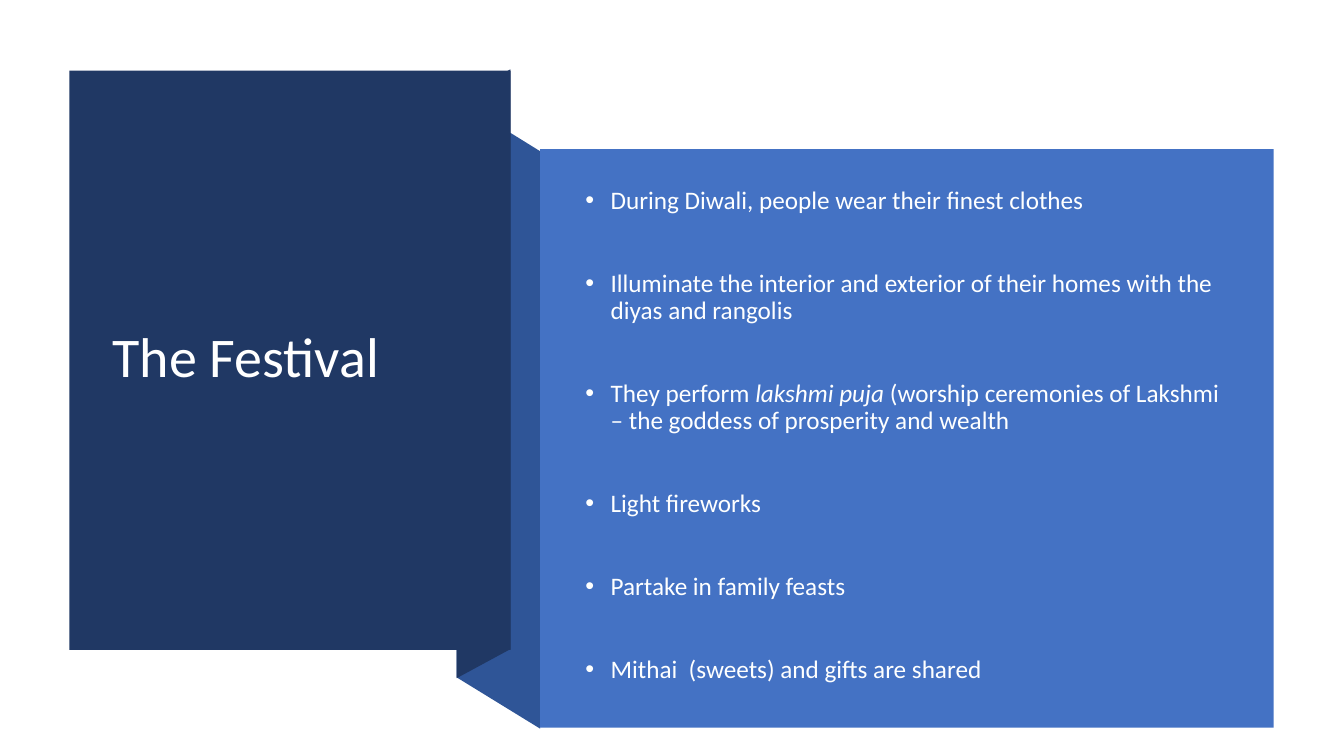
from pptx import Presentation
from pptx.util import Cm, Pt
from pptx.dml.color import RGBColor
from pptx.enum.shapes import MSO_SHAPE
from pptx.enum.text import MSO_ANCHOR
from lxml.etree import SubElement
from pptx.oxml.ns import qn


def paint(shape, color):
    shape.shadow.inherit = False
    shape.fill.solid()
    shape.fill.fore_color.rgb = RGBColor.from_string(color)
    shape.line.fill.background()


def add_text(slide, place, lines, size, color):
    box = slide.shapes.add_textbox(*[Cm(length) for length in place])
    frame = box.text_frame
    frame.word_wrap = True
    frame.vertical_anchor = MSO_ANCHOR.MIDDLE
    frame.text = "\n".join(lines)
    for para in frame.paragraphs:
        para.line_spacing = 0.9
        para.font.size = Pt(size)
        para.font.name = "Calibri"
        para.font.color.rgb = RGBColor.from_string(color)
    return frame.paragraphs


deck = Presentation()
deck.slide_width, deck.slide_height = Cm(33.87), Cm(19.05)
page = deck.slides.add_slide(deck.slide_layouts[6])

# Folded ribbon behind the panels
folds = [
    ("2F5597", [(13.61, 18.36), (11.51, 17.07), (11.51, 2.51), (13.61, 3.81)]),
    ("203864", [(12.86, 16.36), (11.51, 17.09), (11.51, 2.49), (12.86, 1.75)]),
]
for color, corners in folds:
    points = [(Cm(x), Cm(y)) for x, y in corners]
    outline = page.shapes.build_freeform(*points[0])
    outline.add_line_segments(points[1:], close=True)
    paint(outline.convert_to_shape(), color)

# Title panel and content panel
panels = [
    ("203864", (1.75, 1.78, 11.12, 14.6)),
    ("4472C4", (13.61, 3.76, 18.49, 14.58)),
]
for color, place in panels:
    panel = page.shapes.add_shape(MSO_SHAPE.RECTANGLE, *[Cm(length) for length in place])
    paint(panel, color)

# Title
add_text(page, (2.59, 2.72, 9.42, 12.67), ["The Festival"], 40, "FFFFFF")

# Bulleted customs
customs = [
    "During Diwali, people wear their finest clothes",
    "Illuminate the interior and exterior of their homes with the diyas and rangolis",
    "They perform lakshmi puja (worship ceremonies of Lakshmi – the goddess of prosperity and wealth",
    "Light fireworks",
    "Partake in family feasts",
    "Mithai  (sweets) and gifts are shared",
]
paras = add_text(page, (14.5, 4.27, 16.54, 13.41), customs, 18, "FEFFFF")
for number, para in enumerate(paras):
    para.space_before = Pt(39.8 if number else 10)
    properties = para._p.get_or_add_pPr()
    properties.set("marL", str(Cm(0.64)))
    properties.set("indent", str(-Cm(0.64)))
    bullet_font = SubElement(properties, qn("a:buFont"))
    bullet_font.set("typeface", "Arial")
    bullet = SubElement(properties, qn("a:buChar"))
    bullet.set("char", "•")
    # Schema order: default run properties follow the bullet
    properties.append(properties.find(qn("a:defRPr")))

# Runs carry the look; the ritual's name is in italics
ritual = "lakshmi puja"
before, after = customs[2].split(ritual)
paras[2].runs[0].text = before
for words in (ritual, after):
    paras[2].add_run().text = words
paras[2].runs[1].font.italic = True
for shape in page.shapes:
    for para in shape.text_frame.paragraphs:
        for span in para.runs:
            span.font.name = "Calibri"
            span.font.size = para.font.size
            span.font.color.rgb = para.font.color.rgb

deck.save("out.pptx")
